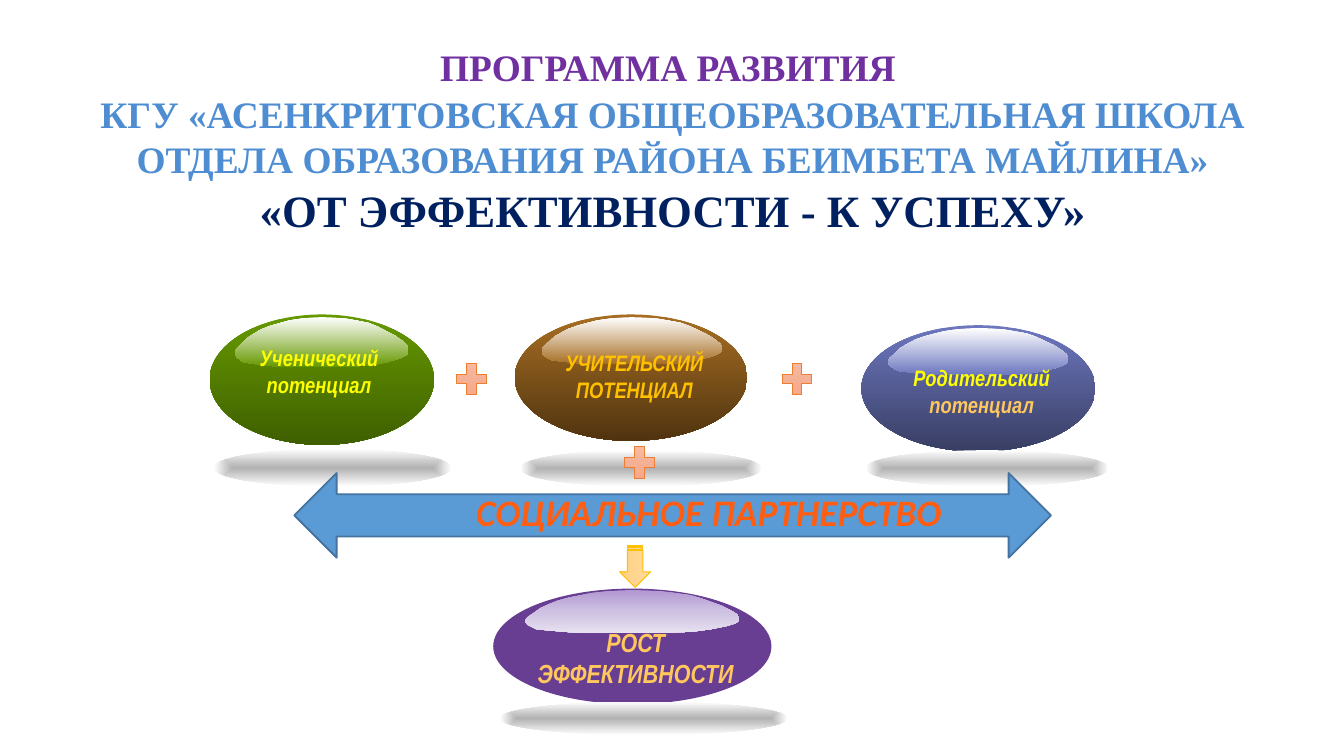
from lxml import etree
from pptx import Presentation
from pptx.dml.color import RGBColor
from pptx.enum.shapes import MSO_SHAPE
from pptx.enum.text import MSO_ANCHOR, MSO_AUTO_SIZE, PP_ALIGN
from pptx.oxml.ns import qn
from pptx.util import Inches, Pt

OVAL, PLUS = MSO_SHAPE.OVAL, MSO_SHAPE.MATH_PLUS
WIDE_ARROW, DOWN_ARROW = MSO_SHAPE.LEFT_RIGHT_ARROW, MSO_SHAPE.STRIPED_RIGHT_ARROW
CENTER, MIDDLE = PP_ALIGN.CENTER, MSO_ANCHOR.MIDDLE
GROW = MSO_AUTO_SIZE.SHAPE_TO_FIT_TEXT

WHITE = RGBColor(0xFF, 0xFF, 0xFF)
GRAY = RGBColor(0xB2, 0xB2, 0xB2)
VIOLET = RGBColor(0x70, 0x30, 0xA0)
SKY = RGBColor(0x4E, 0x8D, 0xD1)
NAVY = RGBColor(0x00, 0x20, 0x60)
YELLOW = RGBColor(0xFF, 0xFF, 0x00)
GOLD = RGBColor(0xFF, 0xC0, 0x00)
SAND = RGBColor(0xFF, 0xC7, 0x5E)
FLAME = RGBColor(0xFF, 0x5D, 0x12)
ORANGE = RGBColor(0xED, 0x7D, 0x31)
BLUE = RGBColor(0x5B, 0x9B, 0xD5)
BLUE_EDGE = RGBColor(0x43, 0x73, 0x9E)
GREEN, GREEN_DARK = RGBColor(0x66, 0x99, 0x00), RGBColor(0x3F, 0x5F, 0x00)
BROWN, BROWN_DARK = RGBColor(0xA7, 0x6E, 0x23), RGBColor(0x50, 0x34, 0x10)
INDIGO, INDIGO_DARK = RGBColor(0x6D, 0x77, 0xBF), RGBColor(0x38, 0x3E, 0x63)
PURPLE = RGBColor(0x68, 0x3E, 0x92)
LILAC = [RGBColor(0xB1, 0x97, 0xD2), RGBColor(0xCE, 0xC1, 0xE2), RGBColor(0xE7, 0xE1, 0xF0)]
PEACH = [RGBColor(0xF7, 0xBD, 0xA5), RGBColor(0xF5, 0xB1, 0x96), RGBColor(0xF8, 0xA5, 0x82)]
AMBER = [RGBColor(0xFF, 0xDB, 0x9E), RGBColor(0xFF, 0xD5, 0x90), RGBColor(0xFF, 0xD0, 0x7C)]

TITLE = [
    ([("ПРОГРАММА РАЗВИТИЯ ", VIOLET)], 20),
    ([("КГУ «АСЕНКРИТОВСКАЯ ОБЩЕОБРАЗОВАТЕЛЬНАЯ ШКОЛА "
       "ОТДЕЛА ОБРАЗОВАНИЯ РАЙОНА БЕИМБЕТА МАЙЛИНА»", SKY)], 20),
    ([("«ОТ ЭФФЕКТИВНОСТИ - К УСПЕХУ»", NAVY)], 24),
]
PARTNERSHIP = [([("СОЦИАЛЬНОЕ ПАРТНЕРСТВО", FLAME)], 20)]

# runs, text size, body colours, gloss colours, then body, gloss, label and shadow boxes
BUBBLES = [
    ([("Ученический потенциал", YELLOW)], 12, [GREEN, GREEN_DARK], [WHITE, GREEN],
     (1.56, 2.34, 1.67, 0.97), (1.75, 2.36, 1.29, 0.37),
     (1.71, 2.51, 1.33, 0.55), (1.59, 3.34, 1.77, 0.28)),
    ([("УЧИТЕЛЬСКИЙ ПОТЕНЦИАЛ", GOLD)], 12, [BROWN, BROWN_DARK], [WHITE, BROWN],
     (3.83, 2.34, 1.73, 0.94), (4.03, 2.36, 1.34, 0.35),
     (3.94, 2.55, 1.56, 0.55), (3.87, 3.35, 1.8, 0.27)),
    ([("Родительский ", YELLOW), ("потенциал", SAND)], 12,
     [INDIGO, INDIGO_DARK], [WHITE, INDIGO],
     (6.41, 2.42, 1.74, 0.94), (6.61, 2.44, 1.34, 0.35),
     (6.41, 2.66, 1.79, 0.52), (6.44, 3.35, 1.81, 0.27)),
    ([("РОСТ ЭФФЕКТИВНОСТИ", SAND)], 14, [PURPLE], LILAC,
     (3.67, 4.38, 2.07, 0.86), (3.91, 4.39, 1.59, 0.32),
     (3.67, 4.61, 2.12, 0.57), (3.72, 5.22, 2.14, 0.25)),
]
# Outline of the gloss, in percent of its box
GLOSS = [
    (99, 56), (100, 63), (100, 72), (98, 78), (94, 84), (87, 91), (78, 97), (68, 99),
    (60, 100), (36, 100), (26, 100), (18, 97), (11, 94), (5, 91), (1, 81), (0, 75),
    (0, 69), (1, 63), (4, 53), (7, 42), (11, 33), (15, 25), (20, 18), (26, 12),
    (31, 7), (38, 3), (44, 1), (50, 0), (57, 1), (64, 3), (70, 7), (77, 12),
    (82, 19), (87, 28), (92, 37), (96, 47),
]


def paint(shape, colors, line=None, width=0.5, radial=False):
    """Fill with one colour or an even gradient (downward or from the centre)."""
    shape.shadow.inherit = False
    shape.fill.solid()
    shape.fill.fore_color.rgb = colors[0]
    if len(colors) > 1:
        grad = etree.Element(qn("a:gradFill"), rotWithShape="1")
        stops = etree.SubElement(grad, qn("a:gsLst"))
        for i, color in enumerate(colors):
            stop = etree.SubElement(stops, qn("a:gs"), pos=str(i * 100000 // (len(colors) - 1)))
            etree.SubElement(stop, qn("a:srgbClr"), val=str(color))
        if radial:
            path = etree.SubElement(grad, qn("a:path"), path="shape")
            etree.SubElement(path, qn("a:fillToRect"), l="50000", t="50000", r="50000", b="50000")
        else:
            etree.SubElement(grad, qn("a:lin"), ang="5400000", scaled="0")
        solid = shape.element.spPr.find(qn("a:solidFill"))
        solid.getparent().replace(solid, grad)
    if line is None:
        shape.line.fill.background()
    else:
        shape.line.color.rgb = line
        shape.line.width = Pt(width)


def add_preset(shapes, kind, box, colors, **style):
    shape = shapes.add_shape(kind, *map(Inches, box))
    paint(shape, colors, **style)
    return shape


def add_gloss(shapes, box, colors):
    x, y, w, h = box
    points = [(Inches(x + w * px / 100), Inches(y + h * py / 100)) for px, py in GLOSS]
    builder = shapes.build_freeform(*points[0])
    builder.add_line_segments(points[1:], close=True)
    paint(builder.convert_to_shape(), colors)


def add_text(shapes, box, paragraphs, font, italic=False, gap=0):
    tb = shapes.add_textbox(*map(Inches, box))
    tf = tb.text_frame
    tf.word_wrap = True
    tf.auto_size = GROW
    for i, (runs, size) in enumerate(paragraphs):
        p = tf.add_paragraph() if i else tf.paragraphs[0]
        p.alignment = CENTER
        if i and gap:
            p.space_before = Pt(gap)
        p.font.name, p.font.size = font, Pt(size)
        p.font.bold, p.font.italic = True, italic
        for text, color in runs:
            r = p.add_run()
            r.text = text
            r.font.color.rgb = color
    return tf


prs = Presentation()
prs.slide_width = Inches(10)
prs.slide_height = Inches(10 * 9 / 16)
s = prs.slides.add_slide(prs.slide_layouts[6])

tf = add_text(s.shapes, (0.71, 0.31, 8.59, 1.46), TITLE, "Times New Roman", gap=1.1)
tf.vertical_anchor = MIDDLE
tf.margin_left = tf.margin_right = tf.margin_bottom = 0
tf.margin_top = Inches(0.01)

for runs, size, body_colors, gloss_colors, body, gloss, label, shadow in BUBBLES:
    group = s.shapes.add_group_shape().shapes
    add_preset(group, OVAL, body, body_colors)
    add_gloss(group, gloss, gloss_colors)
    add_text(group, label, [(runs, size)], "Arial Narrow", italic=True)
    add_preset(group, OVAL, shadow, [GRAY, WHITE], radial=True)

arrow = add_preset(s.shapes, DOWN_ARROW, (4.57, 4.1, 0.31, 0.23), AMBER, line=GOLD)
arrow.rotation = 90
add_preset(s.shapes, WIDE_ARROW, (2.19, 3.52, 5.63, 0.63), [BLUE], line=BLUE_EDGE, width=1)
add_text(s.shapes, (0.55, 3.59, 9.45, 0.44), PARTNERSHIP, "Calibri", italic=True)
for left, top in [(3.36, 2.66), (5.78, 2.66), (4.61, 3.28)]:
    add_preset(s.shapes, PLUS, (left, top, 0.3, 0.32), PEACH, line=ORANGE)

prs.save("out.pptx")
